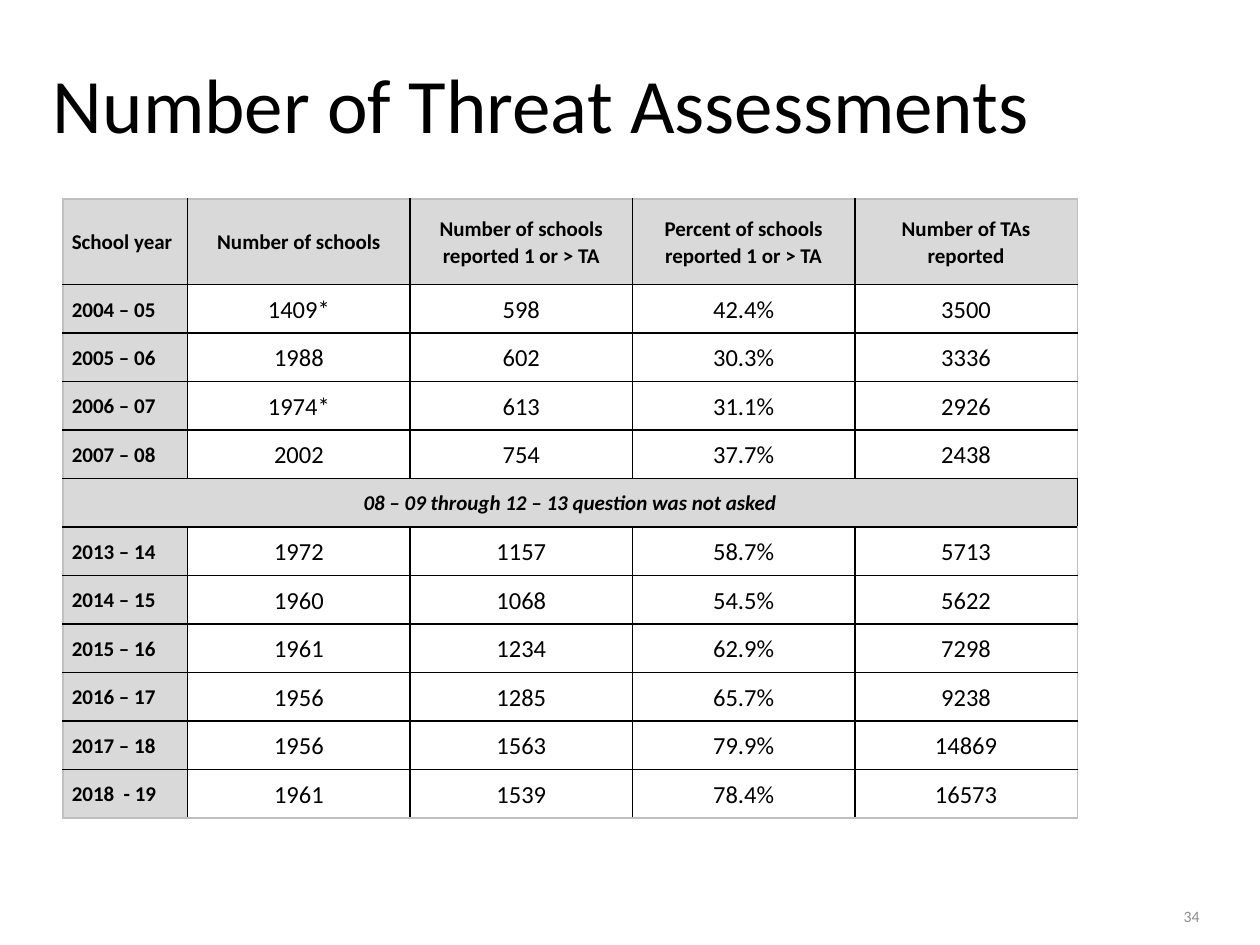
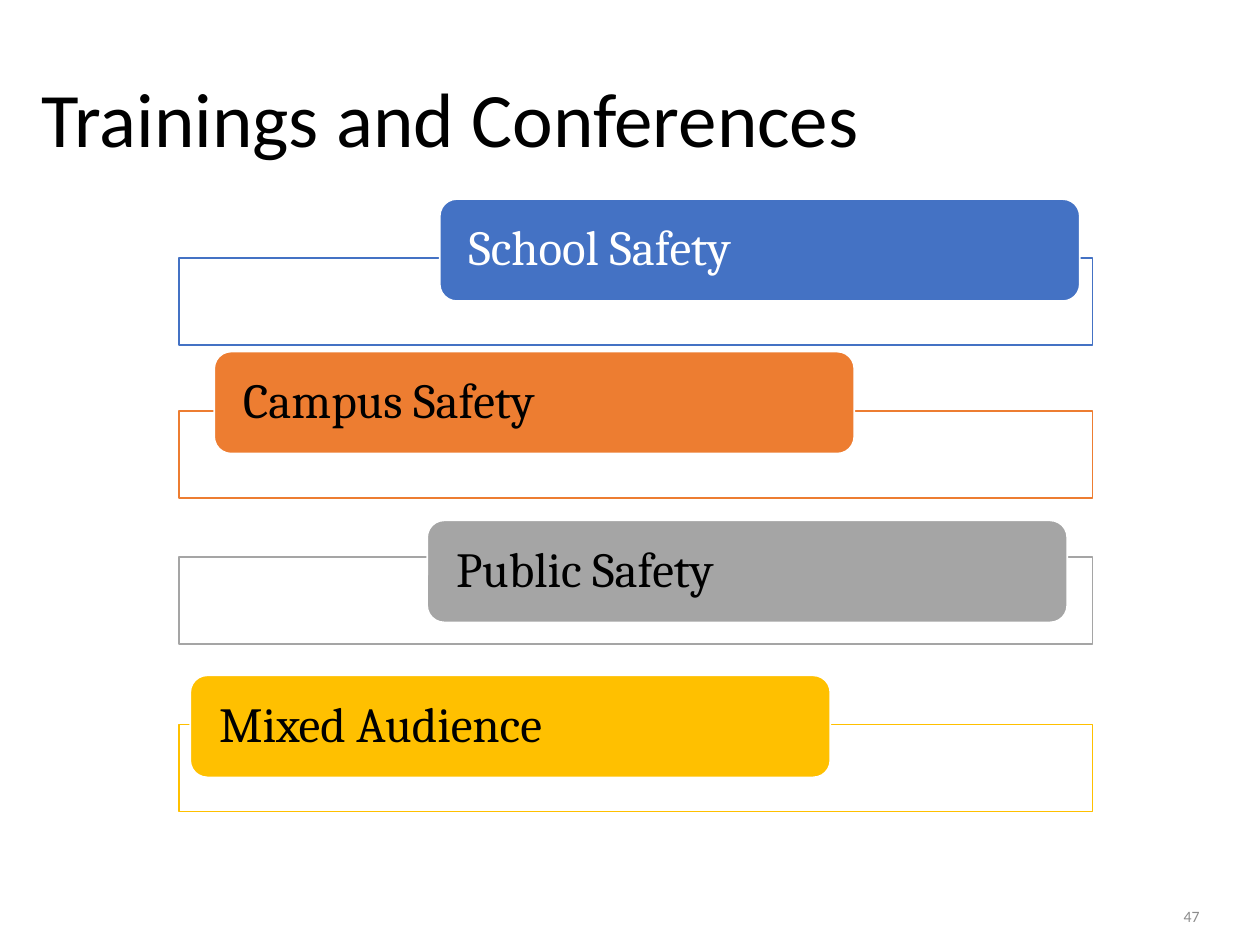
from typing import NamedTuple

from lxml import etree
from pptx import Presentation
from pptx.dml.color import RGBColor
from pptx.enum.shapes import MSO_SHAPE
from pptx.enum.text import MSO_ANCHOR, MSO_AUTO_SIZE, PP_ALIGN
from pptx.oxml.ns import qn
from pptx.util import Inches, Pt

RECTANGLE, ROUNDED = MSO_SHAPE.RECTANGLE, MSO_SHAPE.ROUNDED_RECTANGLE
MIDDLE, BOTTOM = MSO_ANCHOR.MIDDLE, MSO_ANCHOR.BOTTOM
LEFT, CENTER, RIGHT = PP_ALIGN.LEFT, PP_ALIGN.CENTER, PP_ALIGN.RIGHT
NO_AUTOFIT = MSO_AUTO_SIZE.NONE
TITLE_ONLY = 5

BODY_FONT, LABEL_FONT = "Calibri", "Cambria"
BLACK, WHITE = "000000", "FFFFFF"
HEADER_GREY, EDGE_GREY, NUMBER_GREY = "D9D9D9", "BFBFBF", "8C8C8C"


class Box(NamedTuple):
    left: float
    top: float
    width: float
    height: float

    def emu(self) -> list:
        return [Inches(length) for length in self]


class Audience(NamedTuple):
    label: str
    colour: str
    text_colour: str
    band_top: float
    tab_left: float
    tab_top: float


HEADERS = ["School year", "Number of schools", "Number of schools reported 1 or > TA",
           "Percent of schools reported 1 or > TA", "Number of TAs reported"]
GAP_NOTE = "08 – 09 through 12 – 13 question was not asked"
SCHOOL_YEARS = [
    ["2004 – 05", "1409*", "598", "42.4%", "3500"],
    ["2005 – 06", "1988", "602", "30.3%", "3336"],
    ["2006 – 07", "1974*", "613", "31.1%", "2926"],
    ["2007 – 08", "2002", "754", "37.7%", "2438"],
    [GAP_NOTE, "", "", "", ""],
    ["2013 – 14", "1972", "1157", "58.7%", "5713"],
    ["2014 – 15", "1960", "1068", "54.5%", "5622"],
    ["2015 – 16", "1961", "1234", "62.9%", "7298"],
    ["2016 – 17", "1956", "1285", "65.7%", "9238"],
    ["2017 – 18", "1956", "1563", "79.9%", "14869"],
    ["2018  - 19", "1961", "1539", "78.4%", "16573"],
]
TABLE_BOX = Box(0.5, 1.58, 8.05, 4.91)
YEAR_WIDTH, COUNT_WIDTH = 0.99, 1.765
HEADER_HEIGHT, ROW_HEIGHT = 0.68, 0.385

AUDIENCES = [
    Audience("School Safety", "4472C4", WHITE, 2.05, 3.49, 1.58),
    Audience("Campus Safety", "ED7D31", BLACK, 3.26, 1.7, 2.79),
    Audience("Public Safety", "A5A5A5", BLACK, 4.42, 3.39, 4.13),
    Audience("Mixed Audience", "FFC000", BLACK, 5.75, 1.51, 5.36),
]


def rgb(colour: str) -> RGBColor:
    return RGBColor.from_string(colour)


def write(frame, text: str, size: float, colour: str = BLACK, font: str = BODY_FONT,
          align=LEFT, spacing: float = 1.0, bold: bool = False, italic: bool = False) -> None:
    paragraph = frame.paragraphs[0]
    paragraph.text = text
    paragraph.alignment = align
    paragraph.line_spacing = spacing
    paragraph.font.name = font
    paragraph.font.size = Pt(size)
    paragraph.font.bold = bold
    paragraph.font.italic = italic
    paragraph.font.color.rgb = rgb(colour)


def prepare_frame(frame, anchor, side_inset: float = 0) -> None:
    frame.word_wrap = True
    frame.auto_size = NO_AUTOFIT
    frame.vertical_anchor = anchor
    frame.margin_left = frame.margin_right = Inches(side_inset)
    frame.margin_top = frame.margin_bottom = 0


def add_titled_slide(deck, title_text: str, title_box: Box, page: str):
    slide = deck.slides.add_slide(deck.slide_layouts[TITLE_ONLY])
    title = slide.shapes.title
    title.left, title.top, title.width, title.height = title_box.emu()
    prepare_frame(title.text_frame, MIDDLE)
    write(title.text_frame, title_text, 44, spacing=0.9)
    page_number = slide.shapes.add_textbox(*Box(7.27, 6.95, 2.25, 0.4).emu())
    prepare_frame(page_number.text_frame, BOTTOM)
    write(page_number.text_frame, page, 9, NUMBER_GREY, align=RIGHT)
    return slide


def set_borders(cell, edges: dict[str, str]) -> None:
    properties = cell._tc.get_or_add_tcPr()
    for position, (tag, colour) in enumerate(edges.items()):
        line = etree.Element(qn(f"a:{tag}"), w=str(Pt(1)))
        fill = etree.SubElement(line, qn("a:solidFill"))
        etree.SubElement(fill, qn("a:srgbClr"), val=colour)
        properties.insert(position, line)


def add_assessment_table(slide) -> None:
    rows = [HEADERS, *SCHOOL_YEARS]
    last_row, last_column = len(rows) - 1, len(HEADERS) - 1
    table = slide.shapes.add_table(len(rows), len(HEADERS), *TABLE_BOX.emu()).table
    table.first_row = table.horz_banding = False
    for c, column in enumerate(table.columns):
        column.width = Inches(COUNT_WIDTH if c else YEAR_WIDTH)
    for r, values in enumerate(rows):
        table.rows[r].height = Inches(ROW_HEIGHT if r else HEADER_HEIGHT)
        is_note = values[0] == GAP_NOTE
        if is_note:
            table.cell(r, 0).merge(table.cell(r, last_column))
        for c, value in enumerate(values):
            cell = table.cell(r, c)
            is_heading = r == 0 or c == 0 or is_note
            cell.vertical_anchor = MIDDLE
            cell.margin_left = cell.margin_right = Inches(0.07)
            cell.margin_top = cell.margin_bottom = 0
            write(cell.text_frame, value, 12 if is_heading else 14,
                  align=CENTER if c or is_note else LEFT, spacing=1.07,
                  bold=is_heading, italic=is_note)
            if is_heading:
                cell.fill.solid()
                cell.fill.fore_color.rgb = rgb(HEADER_GREY)
            else:
                cell.fill.background()
            set_borders(cell, {
                "lnL": BLACK if c else EDGE_GREY,
                "lnR": BLACK if c < last_column else EDGE_GREY,
                "lnT": BLACK if r else EDGE_GREY,
                "lnB": BLACK if r < last_row else EDGE_GREY,
            })


def add_block(slide, preset, box: Box, fill: str, line: str):
    block = slide.shapes.add_shape(preset, *box.emu())
    block.shadow.inherit = False
    block.fill.solid()
    block.fill.fore_color.rgb = rgb(fill)
    block.line.color.rgb = rgb(line)
    block.line.width = Pt(1)
    return block


def add_audience(slide, audience: Audience) -> None:
    band = add_block(slide, RECTANGLE, Box(1.42, audience.band_top, 7.25, 0.69),
                     WHITE, audience.colour)
    band_colour = band._element.spPr.find(qn("a:solidFill")).find(qn("a:srgbClr"))
    etree.SubElement(band_colour, qn("a:alpha"), val="90000")
    tab = add_block(slide, ROUNDED, Box(audience.tab_left, audience.tab_top, 5.08, 0.81),
                    audience.colour, WHITE)
    prepare_frame(tab.text_frame, MIDDLE, 0.19)
    write(tab.text_frame, audience.label, 28, audience.text_colour, LABEL_FONT, spacing=0.9)


def main() -> None:
    deck = Presentation()
    deck.slide_width, deck.slide_height = Inches(10), Inches(7.5)

    assessments = add_titled_slide(deck, "Number of Threat Assessments",
                                   Box(0.42, 0.17, 9.08, 1.38), "34")
    add_assessment_table(assessments)

    trainings = add_titled_slide(deck, "Trainings and Conferences",
                                 Box(0.33, 0.4, 9.17, 1.14), "47")
    for audience in AUDIENCES:
        add_audience(trainings, audience)

    deck.save("out.pptx")


if __name__ == "__main__":
    main()
